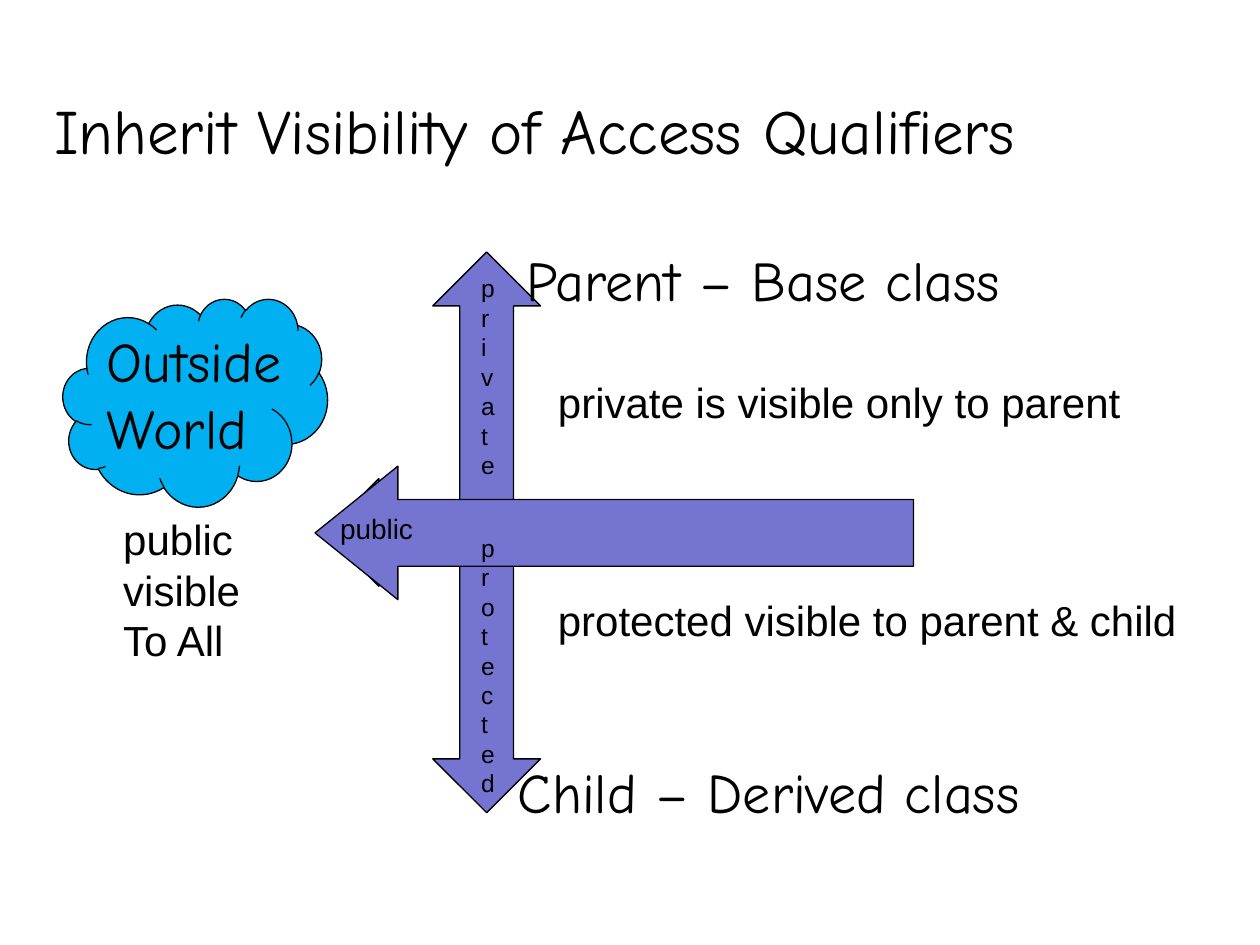
import pptx
import pptx.util
import pptx.dml.color
import pptx.enum.shapes
import pptx.enum.text

Inches, Pt = pptx.util.Inches, pptx.util.Pt
SHAPE = pptx.enum.shapes.MSO_SHAPE
BLACK, VIOLET, SKY = "000000", "7575D1", "00B0F0"
HAND, SANS = "Comic Neue", "Arial"


def rgb(value):
    return pptx.dml.color.RGBColor.from_string(value)


def write(tf, lines, size=24, font=SANS, color=BLACK):
    """Put one paragraph per item of lines into the text frame."""
    for i, line in enumerate(lines):
        p = tf.paragraphs[0] if i == 0 else tf.add_paragraph()
        p.alignment = pptx.enum.text.PP_ALIGN.LEFT
        r = p.add_run()
        r.text = line
        r.font.size = Pt(size)
        r.font.name = font
        r.font.color.rgb = rgb(color)


def add_label(s, box, lines, inset=0.05, **style):
    tf = s.shapes.add_textbox(*map(Inches, box)).text_frame
    tf.word_wrap = False
    tf.auto_size = pptx.enum.text.MSO_AUTO_SIZE.SHAPE_TO_FIT_TEXT
    tf.margin_top = tf.margin_bottom = Inches(inset)
    write(tf, lines, **style)


def add_outlined(shapes, kind, box, fill):
    sp = shapes.add_shape(kind, *map(Inches, box))
    sp.shadow.inherit = False
    sp.fill.solid()
    sp.fill.fore_color.rgb = rgb(fill)
    sp.line.color.rgb = rgb(BLACK)
    sp.line.width = Pt(0.75)
    return sp


def add_title(s, box):
    sp = s.shapes.title
    sp.left, sp.top, sp.width, sp.height = map(Inches, box)
    tf = sp.text_frame
    tf.vertical_anchor = pptx.enum.text.MSO_ANCHOR.BOTTOM
    tf.auto_size = pptx.enum.text.MSO_AUTO_SIZE.NONE
    write(tf, ["Inherit Visibility of Access Qualifiers"], size=36, font=HAND)


def add_outside_world(s, x, y):
    add_outlined(s.shapes, SHAPE.CLOUD, (x, y, 2.1, 1.65), SKY)
    add_label(s, (x + 0.25, y + 0.17, 1.86, 1.18), ["Outside", "World"],
              size=32, font=HAND)
    add_label(s, (x + 0.38, y + 1.66, 1.14, 1.31),
              ["public", "visible", "To All"])


def add_access_arrows(s, x, y):
    """Three-way arrow with the public arrow over it, and their labels."""
    group = s.shapes.add_group_shape()
    three_way = add_outlined(group.shapes, SHAPE.LEFT_RIGHT_UP_ARROW,
                             (x - 1.29, y + 1.37, 4.45, 1.71), VIOLET)
    three_way.rotation = 270
    public = add_outlined(group.shapes, SHAPE.LEFT_ARROW,
                          (x, y + 1.7, 4.75, 1.06), VIOLET)
    public.adjustments[1] = 0.621
    add_label(s, (x + 0.1, y + 2.01, 0.79, 0.37), ["public"], size=16)
    for word, top, height in (("private", 0.17, 1.65),
                              ("protected", 2.23, 2.12)):
        add_label(s, (x + 1.22, y + top, 0.31, height), word,
                  inset=0, size=14)


def add_classes(s, x, y):
    """Class names, and what each of them can see."""
    for name, left, top, width in (
            ("Parent – Base class", 0.07, 0, 4.17),
            ("Child – Derived class", 0, 4.06, 4.51)):
        add_label(s, (x + left, y + top, width, 0.64), [name],
                  size=32, font=HAND)
    for note, top, width in (
            ("private is visible only to parent", 1.04, 4.71),
            ("protected visible to parent & child", 2.77, 5.26)):
        add_label(s, (x + 0.32, y + top, width, 0.5), [note])


def main():
    prs = pptx.Presentation()
    prs.slide_width, prs.slide_height = Inches(10), Inches(7.5)
    s = prs.slides.add_slide(prs.slide_layouts[5])
    add_title(s, (0.33, 0.29, 9.42, 1.09))
    add_outside_world(s, 0.5, 2.37)
    add_access_arrows(s, 2.5, 2)
    add_classes(s, 4.01, 1.9)
    prs.save("out.pptx")


if __name__ == "__main__":
    main()
